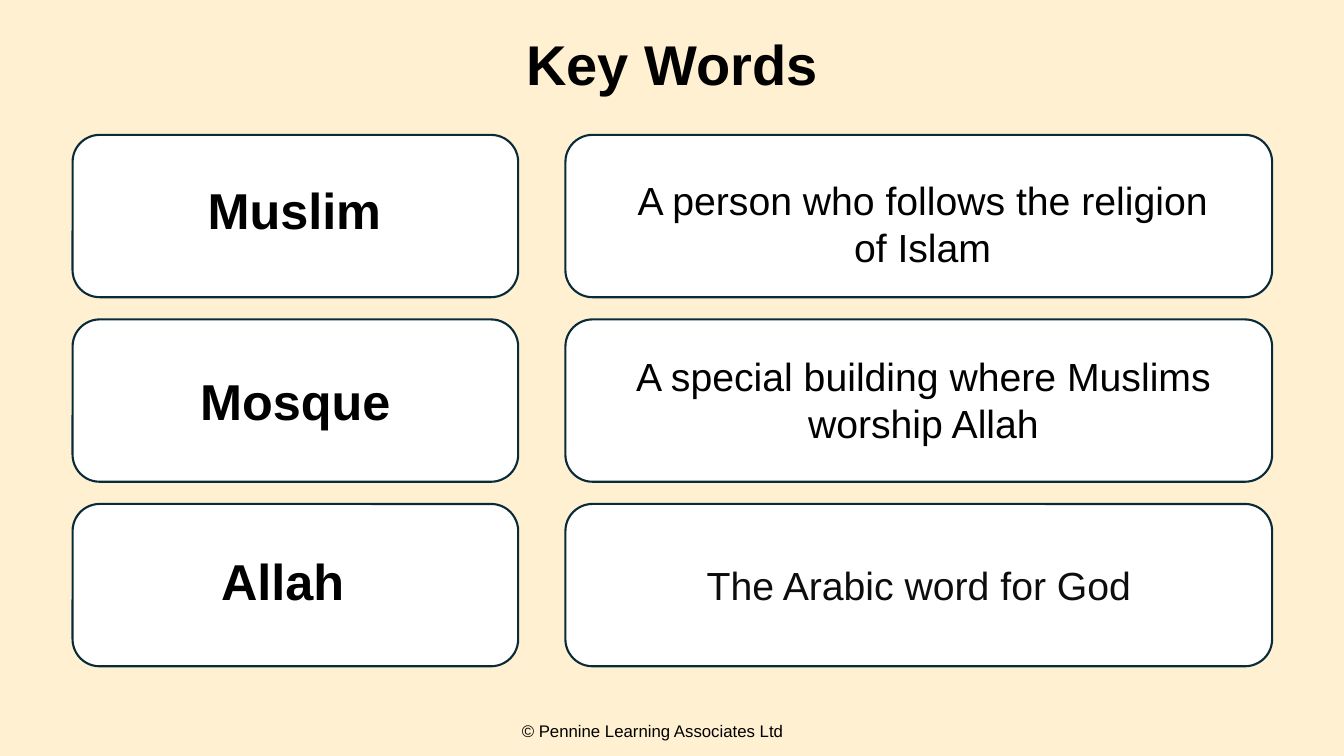
from dataclasses import dataclass

from pptx import Presentation
from pptx.dml.color import RGBColor
from pptx.enum.shapes import MSO_SHAPE
from pptx.enum.text import MSO_ANCHOR, PP_ALIGN
from pptx.shapes.autoshape import Shape
from pptx.slide import Slide
from pptx.util import Cm, Pt

ROUNDED = MSO_SHAPE.ROUNDED_RECTANGLE
MIDDLE, TOP = MSO_ANCHOR.MIDDLE, MSO_ANCHOR.TOP
CENTER, LEFT = PP_ALIGN.CENTER, PP_ALIGN.LEFT

COLOURS = {
    "background": "FFF0D1",
    "card": "FFFFFF",
    "outline": "092A39",
    "text": "000000",
    "soft_text": "0D0D0D",
}
FONT = "Arial"
FIRST_ROW_TOP = 3.4
ROW_PITCH = 4.65
CARD_HEIGHT = 4.09
ROW_COUNT = 3


@dataclass(frozen=True)
class Column:
    left: float
    width: float


@dataclass(frozen=True)
class Wording:
    text: str
    size: int
    bold: bool = False
    colour: str = "text"
    align: PP_ALIGN = CENTER
    anchor: MSO_ANCHOR = TOP
    line_spacing: float = 1.0


@dataclass(frozen=True)
class Label:
    left: float
    top: float
    width: float
    height: float
    wording: Wording


WORD_COLUMN = Column(1.83, 11.23)
MEANING_COLUMN = Column(14.25, 17.81)

CARD_WORDINGS = {
    (WORD_COLUMN, 1): Wording("Mosque", 36, bold=True, anchor=MIDDLE),
    (MEANING_COLUMN, 2): Wording(
        "The Arabic word for God", 28, colour="soft_text", anchor=MIDDLE
    ),
}

LABELS = [
    Label(12.9, 18.03, 8.08, 0.76,
          Wording("© Pennine Learning Associates Ltd", 12, align=LEFT)),
    Label(0, 0, 33.87, 3.4,
          Wording("Key Words", 40, bold=True, anchor=MIDDLE, line_spacing=0.9)),
    Label(3.38, 4.39, 8.08, 1.8, Wording("Muslim", 36, bold=True)),
    Label(15.44, 4.32, 15.62, 2.64,
          Wording("A person who follows the religion of Islam", 28)),
    Label(14.48, 8.76, 17.58, 2.64,
          Wording("A special building where Muslims worship Allah", 28)),
    Label(2.77, 13.74, 8.71, 1.8, Wording("Allah", 36, bold=True)),
]


def colour(name: str) -> RGBColor:
    return RGBColor.from_string(COLOURS[name])


def write(shape: Shape, wording: Wording) -> None:
    frame = shape.text_frame
    frame.word_wrap = True
    frame.vertical_anchor = wording.anchor
    para = frame.paragraphs[0]
    para.alignment = wording.align
    para.line_spacing = wording.line_spacing
    span = para.add_run()
    span.text = wording.text
    span.font.name = FONT
    span.font.size = Pt(wording.size)
    span.font.bold = wording.bold
    span.font.color.rgb = colour(wording.colour)


def draw_card(page: Slide, column: Column, row: int) -> None:
    top = FIRST_ROW_TOP + row * ROW_PITCH
    card = page.shapes.add_shape(
        ROUNDED, Cm(column.left), Cm(top), Cm(column.width), Cm(CARD_HEIGHT)
    )
    card.shadow.inherit = False
    card.fill.solid()
    card.fill.fore_color.rgb = colour("card")
    card.line.color.rgb = colour("outline")
    card.line.width = Pt(1.5)
    wording = CARD_WORDINGS.get((column, row))
    if wording:
        write(card, wording)


def draw_label(page: Slide, label: Label) -> None:
    box = page.shapes.add_textbox(
        Cm(label.left), Cm(label.top), Cm(label.width), Cm(label.height)
    )
    write(box, label.wording)


def main() -> None:
    deck = Presentation()
    deck.slide_width = Cm(33.87)
    deck.slide_height = Cm(19.05)
    page = deck.slides.add_slide(deck.slide_layouts[6])
    page.background.fill.solid()
    page.background.fill.fore_color.rgb = colour("background")
    for column in (WORD_COLUMN, MEANING_COLUMN):
        for row in range(ROW_COUNT):
            draw_card(page, column, row)
    for label in LABELS:
        draw_label(page, label)
    deck.save("out.pptx")


if __name__ == "__main__":
    main()
